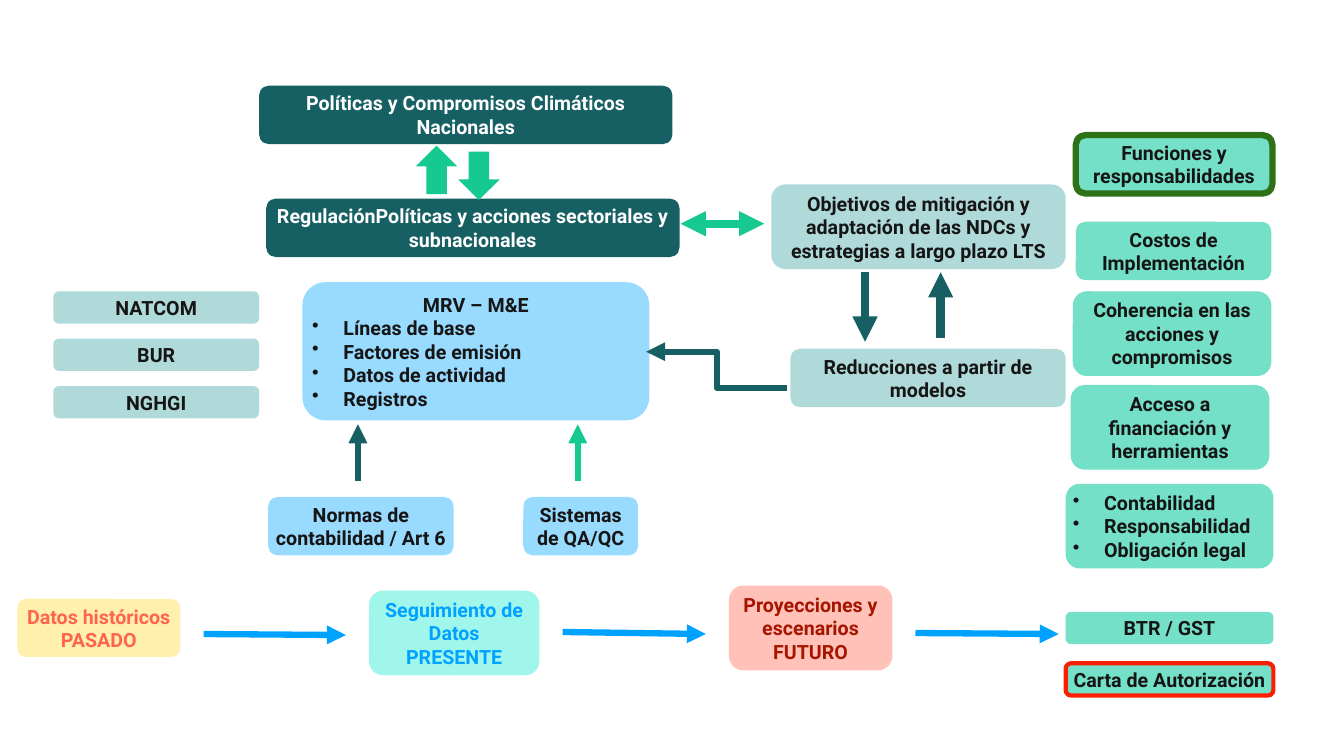
import pptx
import pptx.util
import pptx.dml.color
import pptx.enum.shapes
import pptx.enum.text
import pptx.oxml
import pptx.oxml.ns

PX = 9144  # EMU in one px: 100 px to the inch
DARK, TEXT, WHITE = "166063", "151515", "FFFFFF"
GREY, SKY, MINT = "AFDAD9", "99DAFF", "74E0C7"
GREEN, BLUE = "15C991", "00A2FF"

# Boxes: left, top, width, height, fill, text colour, lines ("•" marks a bullet)
BOXES = [
    (257, 85, 410, 58, DARK, WHITE, ["Políticas y Compromisos Climáticos Nacionales"]),
    (264, 197, 410, 58, DARK, WHITE,
     ["RegulaciónPolíticas y acciones sectoriales y subnacionales"]),
    (300, 280, 344, 137, SKY, TEXT,
     ["MRV – M&E", "•Líneas de base", "•Factores de emisión",
      "•Datos de actividad", "•Registros"]),
    (266, 493, 184, 58, SKY, TEXT, ["Normas de contabilidad / Art 6"]),
    (519, 493, 114, 58, SKY, TEXT, ["Sistemas de QA/QC"]),
    (765, 183, 292, 84, GREY, TEXT,
     ["Objetivos de mitigación y adaptación de las NDCs y estrategias a largo plazo LTS"]),
    (784, 346, 273, 58, GREY, TEXT, ["Reducciones a partir de modelos"]),
    (1067, 134, 195, 58, MINT, TEXT, ["Funciones y responsabilidades"]),
    (1067, 220, 194, 58, MINT, TEXT, ["Costos de Implementación"]),
    (1064, 289, 197, 84, MINT, TEXT, ["Coherencia en las acciones y compromisos"]),
    (1062, 382, 197, 84, MINT, TEXT, ["Acceso a financiación y herramientas"]),
    (1057, 480, 206, 84, MINT, TEXT,
     ["•Contabilidad", "•Responsabilidad", "•Obligación legal"]),
    (1057, 607, 206, 32, MINT, TEXT, ["BTR / GST"]),
    (1057, 658, 206, 32, MINT, TEXT, ["Carta de Autorización"]),
    (17, 594, 162, 58, "FFF0AD", "FF644E", ["Datos históricos", "PASADO"]),
    (366, 586, 169, 84, "A1F6EC", BLUE, ["Seguimiento de Datos", "PRESENTE"]),
    (723, 581, 162, 84, "FFC1B8", "A61500", ["Proyecciones y escenarios", "FUTURO"]),
]
REPORTS = ["NATCOM", "BUR", "NGHGI"]
REPORT_TOP, REPORT_STEP = 289, 47

# Outlined boxes: first line of text -> colour, points
EDGES = {
    "Funciones y responsabilidades": ("2E7116", 4.5),
    "Carta de Autorización": ("FA1F00", 3),
}

# Block arrows: left, top, rotation
BLOCKS = [(409, 148, 90), (451, 154, 270)]

# Arrows: start, end, colour, points, ends with a head
ARROWS = [
    ((675, 222), (758, 222), GREEN, 6, ["headEnd", "tailEnd"]),
    ((858, 270), (858, 339), DARK, 6, ["tailEnd"]),
    ((933, 335), (933, 270), DARK, 6, ["tailEnd"]),
    ((781, 385), (641, 349), DARK, 4.5, ["tailEnd"]),
    ((355, 477), (355, 421), DARK, 4.5, ["tailEnd"]),
    ((573, 477), (573, 421), GREEN, 4.5, ["tailEnd"]),
    ((202, 629), (343, 630), BLUE, 4.5, ["tailEnd"]),
    ((558, 627), (700, 629), BLUE, 4.5, ["tailEnd"]),
    ((908, 628), (1050, 629), BLUE, 4.5, ["tailEnd"]),
]

SHAPE = pptx.enum.shapes.MSO_SHAPE
LINK = pptx.enum.shapes.MSO_CONNECTOR
ALIGN = pptx.enum.text.PP_ALIGN


def color(value):
    return pptx.dml.color.RGBColor.from_string(value)


def add_node(parent, tag, **attrs):
    node = pptx.oxml.ns.qn(tag)
    item = parent.makeelement(node, attrs)
    parent.append(item)
    return item


def add_form(slide, kind, place, fill):
    form = slide.shapes.add_shape(kind, *(v * PX for v in place))
    form.shadow.inherit = False
    form.fill.solid()
    form.fill.fore_color.rgb = color(fill)
    form.line.fill.background()
    return form


def add_box(slide, left, top, width, height, fill, ink, lines):
    box = add_form(slide, SHAPE.ROUNDED_RECTANGLE, (left, top, width, height), fill)
    if lines[0] in EDGES:
        edge, points = EDGES[lines[0]]
        box.line.color.rgb = color(edge)
        box.line.width = pptx.util.Pt(points)
    frame = box.text_frame
    frame.word_wrap = True
    frame.auto_size = pptx.enum.text.MSO_AUTO_SIZE.SHAPE_TO_FIT_TEXT
    frame.vertical_anchor = pptx.enum.text.MSO_ANCHOR.MIDDLE
    frame.margin_left = frame.margin_right = 3 * PX
    frame.margin_top = frame.margin_bottom = 3 * PX
    for i, line in enumerate(lines):
        para = frame.paragraphs[0] if i == 0 else frame.add_paragraph()
        para.text = line.lstrip("•")
        para.alignment = ALIGN.CENTER
        para.font.name = "Roboto"
        para.font.size = pptx.util.Pt(14)
        para.font.bold = True
        para.font.color.rgb = color(ink)
        if line.startswith("•"):
            para.alignment = ALIGN.LEFT
            props = para._p.get_or_add_pPr()
            props.set("marL", str(31 * PX))
            props.set("indent", str(-31 * PX))
            bullet = props.makeelement(pptx.oxml.ns.qn("a:buChar"), {"char": "•"})
            props.insert(0, bullet)


def add_arrow(slide, start, end, ink, points, heads):
    bent = abs(start[0] - end[0]) > 5 and abs(start[1] - end[1]) > 5
    kind = LINK.ELBOW if bent else LINK.STRAIGHT
    arrow = slide.shapes.add_connector(kind, *(v * PX for v in start + end))
    arrow.line.color.rgb = color(ink)
    arrow.line.width = pptx.util.Pt(points)
    for head in heads:
        add_node(arrow.line._get_or_add_ln(), "a:" + head, type="triangle")
    add_node(arrow._element.spPr, "a:effectLst")


def main():
    deck = pptx.Presentation()
    deck.slide_width, deck.slide_height = 1333 * PX, 750 * PX
    slide = deck.slides.add_slide(deck.slide_layouts[6])

    # Reports on the left
    for i, name in enumerate(REPORTS):
        top = REPORT_TOP + i * REPORT_STEP
        add_box(slide, 53, top, 204, 32, GREY, TEXT, [name])

    # Boxes, then the arrows between them
    for box in BOXES:
        add_box(slide, *box)
    for left, top, turn in BLOCKS:
        add_form(slide, SHAPE.LEFT_ARROW, (left, top, 48, 41), GREEN).rotation = turn
    for arrow in ARROWS:
        add_arrow(slide, *arrow)

    deck.save("out.pptx")


if __name__ == "__main__":
    main()
